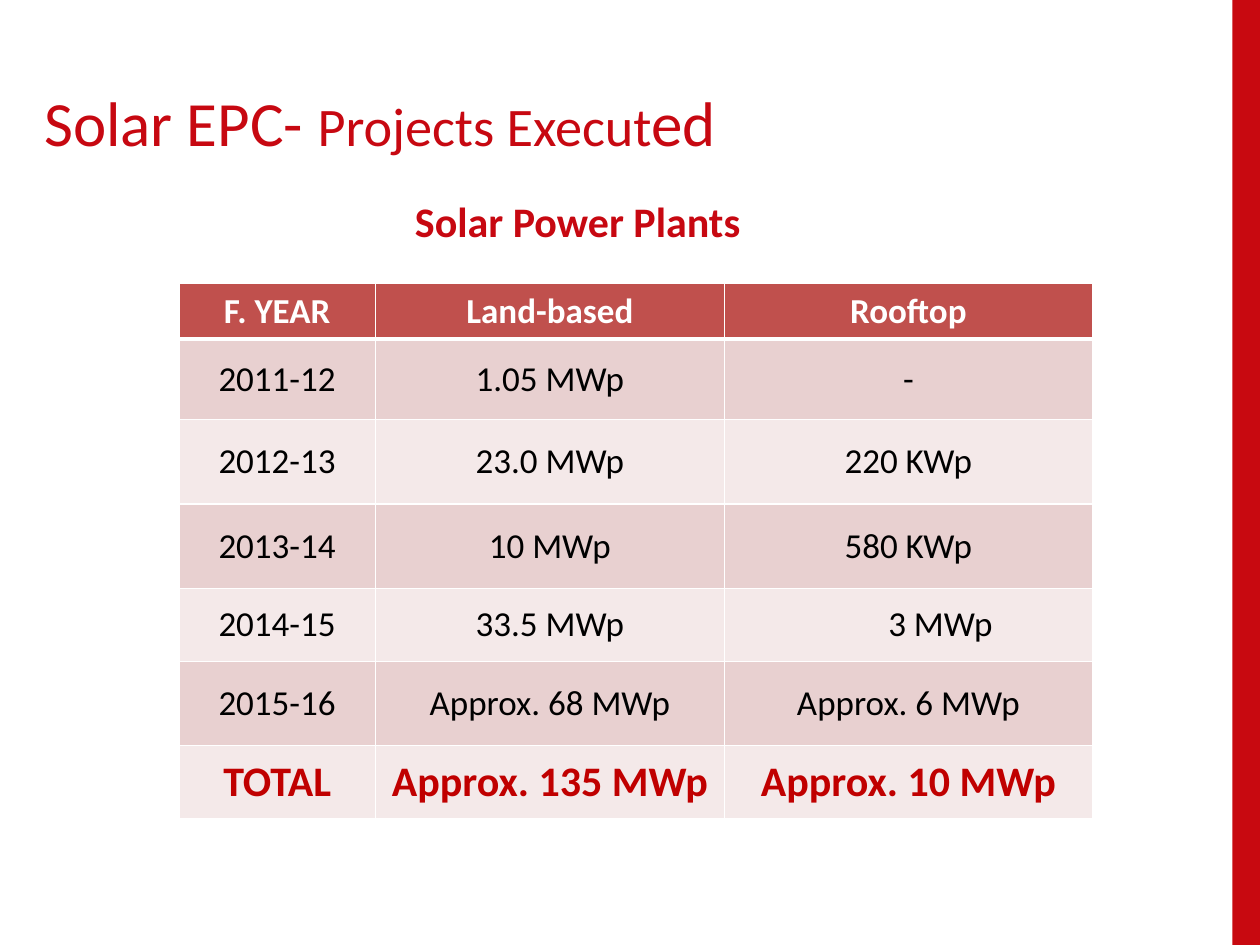
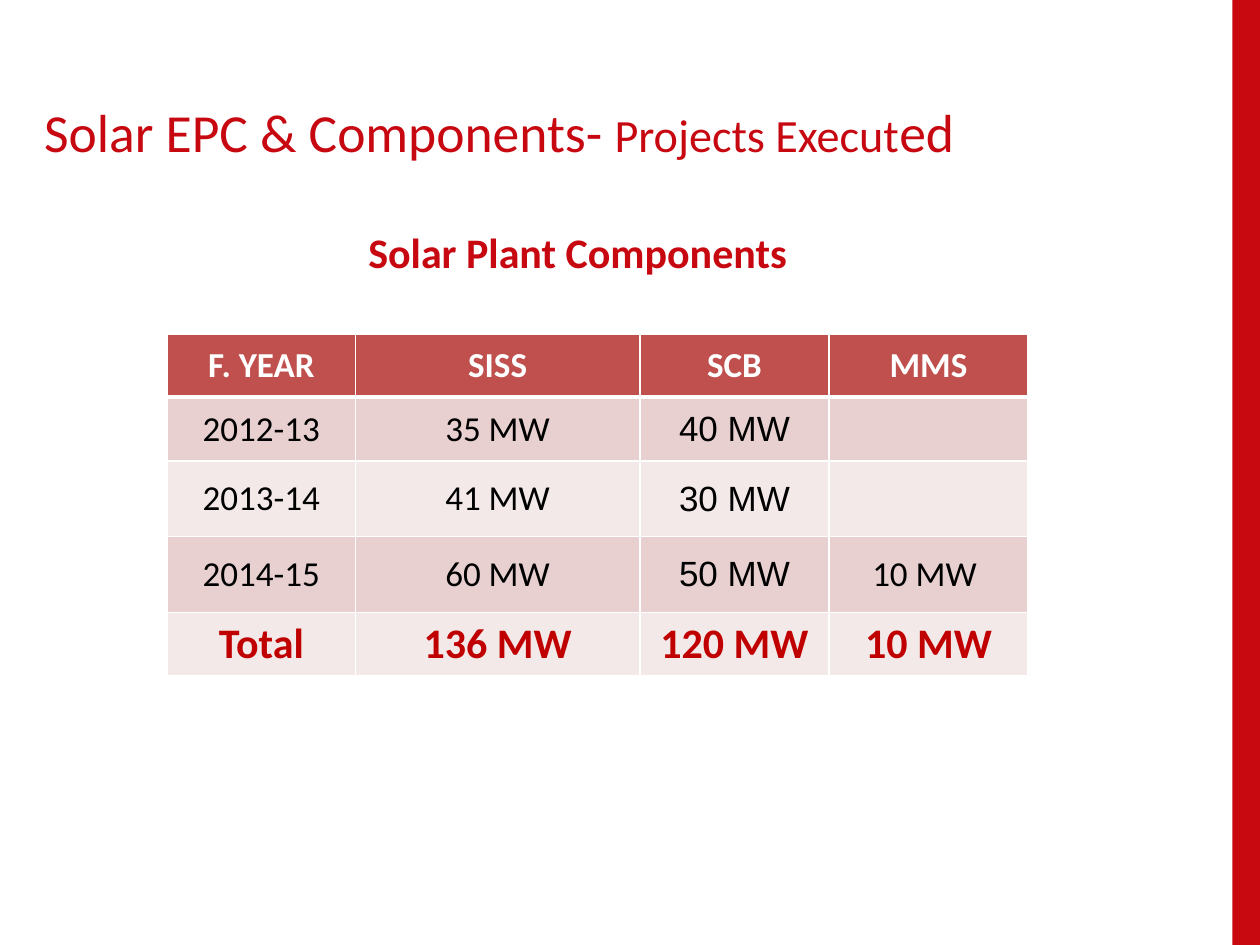
"""Build two slides of solar project tables."""
from dataclasses import dataclass, field

from lxml import etree
from pptx import Presentation
from pptx import util as u
from pptx.dml.color import RGBColor
from pptx.enum import shapes, text
from pptx.oxml.ns import qn

COLOURS = {
    "band": "C80910",
    "title": "C70811",
    "header": "C0504D",
    "odd_row": "E8D0D0",
    "even_row": "F4E9E9",
    "total": "C00000",
    "black": "000000",
    "white": "FFFFFF",
}
FONT = "Calibri"


@dataclass
class YearTable:
    """Position, sizes and wording of a table by financial year."""
    left: float
    top: float
    widths: list[float]
    heights: list[float]
    rows: list[list[str]]
    body_fonts: dict[int, str] = field(default_factory=dict)
    left_insets: dict[tuple[int, int], float] = field(default_factory=dict)


@dataclass
class ProjectSlide:
    """Title, subtitle and table of one slide."""
    topic: str
    title_box: tuple[float, float, float, float]
    large: float
    small: float
    subtitle: str
    subtitle_top: float
    table: YearTable


PROJECTS = [
    ProjectSlide(
        "Solar EPC- ", (0.25, 0.42, 7.42, 1.08), 36, 31, "Solar Power Plants", 1.5,
        YearTable(
            1.42, 2.25, [1.56, 2.77, 2.92], [0.44, 0.64, 0.67, 0.67, 0.58, 0.67, 0.58],
            [
                ["F. YEAR", "Land-based", "Rooftop"],
                ["2011-12", "1.05 MWp", "-"],
                ["2012-13", "23.0 MWp", "220 KWp"],
                ["2013-14", "10 MWp", "580 KWp"],
                ["2014-15", "33.5 MWp", "3 MWp"],
                ["2015-16", "Approx. 68 MWp", "Approx. 6 MWp"],
                ["TOTAL", "Approx. 135 MWp", "Approx. 10 MWp"],
            ],
            left_insets={(4, 2): 1.3},
        ),
    ),
    ProjectSlide(
        "Solar EPC & Components- ", (0.25, 0.58, 7.83, 0.92), 30.6, 26.4,
        "Solar Plant Components", 1.75,
        YearTable(
            1.33, 2.65, [1.49, 2.26, 1.5, 1.58], [0.5, 0.51, 0.6, 0.6, 0.5],
            [
                ["F. YEAR", "SISS", "SCB", "MMS"],
                ["2012-13", "35 MW", "40 MW", ""],
                ["2013-14", "41 MW", "30 MW", ""],
                ["2014-15", "60 MW", "50 MW", "10 MW "],
                ["Total", "136 MW", "120 MW", "10 MW"],
            ],
            body_fonts={2: "Arial"},
        ),
    ),
]


def rgb(name: str) -> RGBColor:
    """Return the named colour."""
    return RGBColor.from_string(COLOURS[name])


def write(paragraph, wording: str, *, size: float, colour: str, bold: bool = False,
          font: str = FONT, align=text.PP_ALIGN.CENTER) -> None:
    """Add a formatted run to a paragraph."""
    paragraph.alignment = align
    run = paragraph.add_run()
    run.text = wording
    run.font.name = font
    run.font.size = u.Pt(size)
    run.font.bold = bold
    run.font.color.rgb = rgb(colour)


def add_band(slide) -> None:
    """Draw the red band on the right edge."""
    band = slide.shapes.add_shape(shapes.MSO_SHAPE.RECTANGLE, u.Inches(9.78), 0,
                                  u.Inches(0.22), u.Inches(7.5))
    band.shadow.inherit = False
    band.fill.solid()
    band.fill.fore_color.rgb = rgb("band")
    band.line.fill.background()


def add_headings(slide, project: ProjectSlide) -> None:
    """Fill the title and add the subtitle above the table."""
    title = slide.shapes.title
    title.left, title.top, title.width, title.height = map(u.Inches, project.title_box)
    title.text_frame.auto_size = text.MSO_AUTO_SIZE.NONE
    title.text_frame.vertical_anchor = text.MSO_ANCHOR.MIDDLE
    for wording, size in ((project.topic, project.large),
                          ("Projects Execut", project.small),
                          ("ed", project.large)):
        write(title.text_frame.paragraphs[0], wording, size=size, colour="title",
              align=text.PP_ALIGN.LEFT)

    subtitle = slide.shapes.add_textbox(u.Inches(1.92), u.Inches(project.subtitle_top),
                                        u.Inches(5.33), u.Inches(0.5)).text_frame
    subtitle.word_wrap = True
    write(subtitle.paragraphs[0], project.subtitle, size=24, colour="title", bold=True)


def add_borders(cell, top: float, bottom: float) -> None:
    """Give a cell white borders, with the top and bottom widths in points."""
    properties = cell._tc.get_or_add_tcPr()
    for side, width in (("L", 1), ("R", 1), ("T", top), ("B", bottom)):
        border = etree.SubElement(properties, qn(f"a:ln{side}"), w=str(u.Pt(width)))
        fill = etree.SubElement(border, qn("a:solidFill"))
        etree.SubElement(fill, qn("a:srgbClr"), val=COLOURS["white"])


def add_year_table(slide, plan: YearTable) -> None:
    """Draw a table with a header, banded years and a total row."""
    table = slide.shapes.add_table(
        len(plan.rows), len(plan.widths), u.Inches(plan.left), u.Inches(plan.top),
        u.Inches(sum(plan.widths)), u.Inches(sum(plan.heights))).table
    for column, width in zip(table.columns, plan.widths):
        column.width = u.Inches(width)
    for row, height in zip(table.rows, plan.heights):
        row.height = u.Inches(height)

    last = len(plan.rows) - 1
    for r, values in enumerate(plan.rows):
        for c, value in enumerate(values):
            cell = table.cell(r, c)
            cell.vertical_anchor = text.MSO_ANCHOR.MIDDLE
            add_borders(cell, top=3 if r == 1 else 1, bottom=3 if r == 0 else 1)
            cell.fill.solid()
            band = "odd_row" if r % 2 else "even_row"
            cell.fill.fore_color.rgb = rgb("header" if r == 0 else band)
            style = {"size": 20, "colour": "black", "font": plan.body_fonts.get(c, FONT)}
            if r == 0:
                style = {"size": 20, "colour": "white", "bold": True}
            elif r == last:
                style = {"size": 24, "colour": "total", "bold": True}
            if (r, c) in plan.left_insets:
                cell.margin_left = u.Inches(plan.left_insets[r, c])
                style["align"] = text.PP_ALIGN.LEFT
            if value:
                write(cell.text_frame.paragraphs[0], value, **style)


def main() -> None:
    """Build and save the presentation."""
    deck = Presentation()
    deck.slide_width, deck.slide_height = u.Inches(10), u.Inches(7.5)
    for project in PROJECTS:
        slide = deck.slides.add_slide(deck.slide_layouts[5])
        add_band(slide)
        add_headings(slide, project)
        add_year_table(slide, project.table)
    deck.save("out.pptx")


if __name__ == "__main__":
    main()
